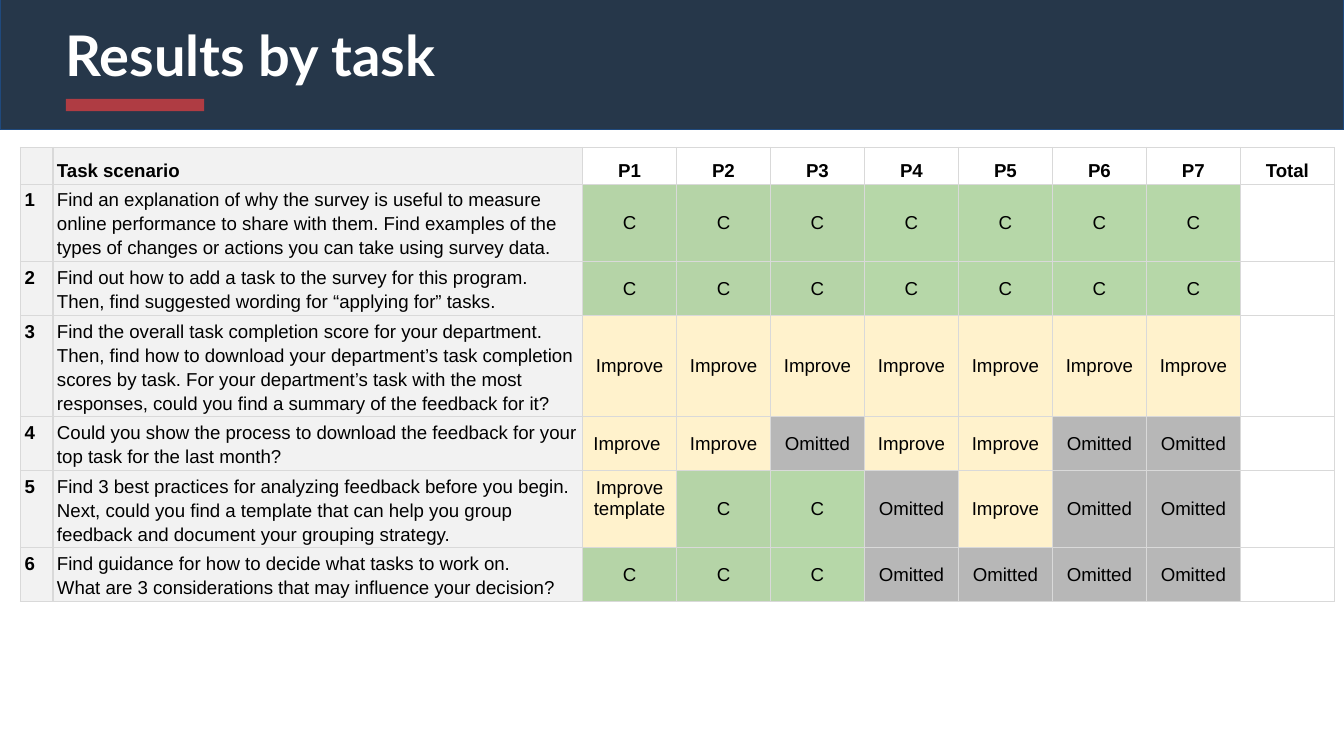
from lxml import etree
from pptx import Presentation
from pptx.dml.color import RGBColor
from pptx.enum.shapes import MSO_SHAPE
from pptx.enum.text import MSO_ANCHOR, PP_ALIGN
from pptx.oxml.ns import qn
from pptx.util import Pt

RECT = MSO_SHAPE.RECTANGLE
TOP, MIDDLE, BOTTOM = MSO_ANCHOR.TOP, MSO_ANCHOR.MIDDLE, MSO_ANCHOR.BOTTOM
LEFT, CENTER = PP_ALIGN.LEFT, PP_ALIGN.CENTER

COLORS = {
    "navy": "26374A", "edge": "1F497D", "red": "AF3C43", "white": "FFFFFF",
    "black": "000000", "grid": "D9D9D9", "pale": "F2F2F2", "leaf": "B5D4A7",
    "green": "B6D7A8", "cream": "FFF2CC", "gray": "B7B7B7",
}
# Result code: wording and fill
MARKS = {
    "L": ("C", "leaf"),
    "G": ("C", "green"),
    "I": ("Improve", "cream"),
    "S": ("Improve ", "cream"),
    "T": ("Improve template", "cream"),
    "O": ("Omitted", "gray"),
}
HEADS = ["P1", "P2", "P3", "P4", "P5", "P6", "P7", "Total"]
# Row height, scenario, result codes for P1 to P7
TASKS = [
    (41.25, "Find an explanation of why the survey is useful to measure online "
     "performance to share with them. Find examples of the types of changes or "
     "actions you can take using survey data.", "LLLGGGG"),
    (28.9, "Find out how to add a task to the survey for this program. Then, "
     "find suggested wording for “applying for” tasks.", "LLLGGGG"),
    (54.1, "Find the overall task completion score for your department. Then, "
     "find how to download your department’s task completion scores by task. "
     "For your department’s task with the most responses, could you find a "
     "summary of the feedback for it?", "IIIIIII"),
    (28.8, "Could you show the process to download the feedback for your top "
     "task for the last month?", "SIOIIOO"),
    (41.25, "Find 3 best practices for analyzing feedback before you begin.\n"
     "Next, could you find a template that can help you group feedback and "
     "document your grouping strategy.", "TLGOIOO"),
    (28.8, "Find guidance for how to decide what tasks to work on.\n"
     "What are 3 considerations that may influence your decision?", "LLGOOOO"),
]
HEAD_H = 19.8
WIDTHS = [17.4, 283.7] + [50.36] * len(HEADS)


def rgb(name):
    return RGBColor.from_string(COLORS[name])


def write(frame, text, size=10, face="Arial", color="black", bold=False,
          align=LEFT, spacing=1.0):
    """Fill a text frame, one paragraph for each line of text."""
    for i, line in enumerate(text.split("\n")):
        para = frame.paragraphs[0] if i == 0 else frame.add_paragraph()
        para.alignment = align
        para.line_spacing = spacing
        if not line:
            # An empty paragraph takes its height from its end mark
            para._p.get_or_add_endParaRPr().set("sz", str(size * 100))
            continue
        run = para.add_run()
        run.text = line
        run.font.size = Pt(size)
        run.font.name = face
        run.font.bold = bold
        run.font.color.rgb = rgb(color)


def add_block(slide, x, y, w, h, fill, edge=None):
    block = slide.shapes.add_shape(RECT, Pt(x), Pt(y), Pt(w), Pt(h))
    block.shadow.inherit = False
    block.fill.solid()
    block.fill.fore_color.rgb = rgb(fill)
    if edge:
        block.line.color.rgb = rgb(edge)
        block.line.width = Pt(0.75)
    else:
        block.line.fill.background()


def add_title(slide, text):
    title = slide.shapes.title
    title.left, title.top = Pt(28), Pt(3.6)
    title.width, title.height = Pt(664), Pt(75.6)
    frame = title.text_frame
    frame.vertical_anchor = TOP
    frame.margin_left = frame.margin_right = Pt(7.2)
    frame.margin_top = frame.margin_bottom = Pt(7.2)
    write(frame, text, size=30, face="Lato", color="white", bold=True)
    # Bring the title in front of the banner
    slide.shapes._spTree.append(title._element)


def add_borders(cell):
    props = cell._tc.get_or_add_tcPr()
    for i, side in enumerate(("lnL", "lnR", "lnT", "lnB")):
        line = etree.Element(qn(f"a:{side}"), w=str(Pt(0.75)))
        fill = etree.SubElement(line, qn("a:solidFill"))
        etree.SubElement(fill, qn("a:srgbClr"), val=COLORS["grid"])
        props.insert(i, line)


def set_cell(cell, text="", fill=None, anchor=TOP, **style):
    cell.margin_left = cell.margin_right = Pt(2.16)
    cell.margin_top = cell.margin_bottom = Pt(1.44)
    cell.vertical_anchor = anchor
    if fill:
        cell.fill.solid()
        cell.fill.fore_color.rgb = rgb(fill)
    else:
        cell.fill.background()
    add_borders(cell)
    write(cell.text_frame, text, **style)


def add_results(slide):
    heights = [HEAD_H] + [task[0] for task in TASKS]
    table = slide.shapes.add_table(
        len(heights), len(WIDTHS), Pt(11), Pt(79),
        Pt(sum(WIDTHS)), Pt(sum(heights))).table
    table.first_row = table.horz_banding = False
    for col, width in zip(table.columns, WIDTHS):
        col.width = Pt(width)
    for row, height in zip(table.rows, heights):
        row.height = Pt(height)

    set_cell(table.cell(0, 0), fill="pale")
    set_cell(table.cell(0, 1), "Task scenario", "pale", BOTTOM, bold=True)
    for c, head in enumerate(HEADS, 2):
        set_cell(table.cell(0, c), head, anchor=BOTTOM, bold=True,
                 align=CENTER)

    for r, (_, task, codes) in enumerate(TASKS, 1):
        set_cell(table.cell(r, 0), str(r), "pale", bold=True, spacing=1.15)
        set_cell(table.cell(r, 1), task, "pale", spacing=1.15)
        for c, code in enumerate(codes, 2):
            cell = table.cell(r, c)
            set_cell(cell, *MARKS[code], MIDDLE, align=CENTER)
            if code == "T":
                cell.margin_bottom = Pt(12.8)  # lifts the two-line result
        set_cell(table.cell(r, len(WIDTHS) - 1))


def main():
    deck = Presentation()
    deck.slide_width, deck.slide_height = Pt(720), Pt(405)
    slide = deck.slides.add_slide(deck.slide_layouts[5])
    add_block(slide, 0, -0.7, 720, 70.3, "navy", "edge")
    add_title(slide, "Results by task")
    add_block(slide, 35.3, 53, 74.1, 6.5, "red")
    add_results(slide)
    deck.save("out.pptx")


if __name__ == "__main__":
    main()
